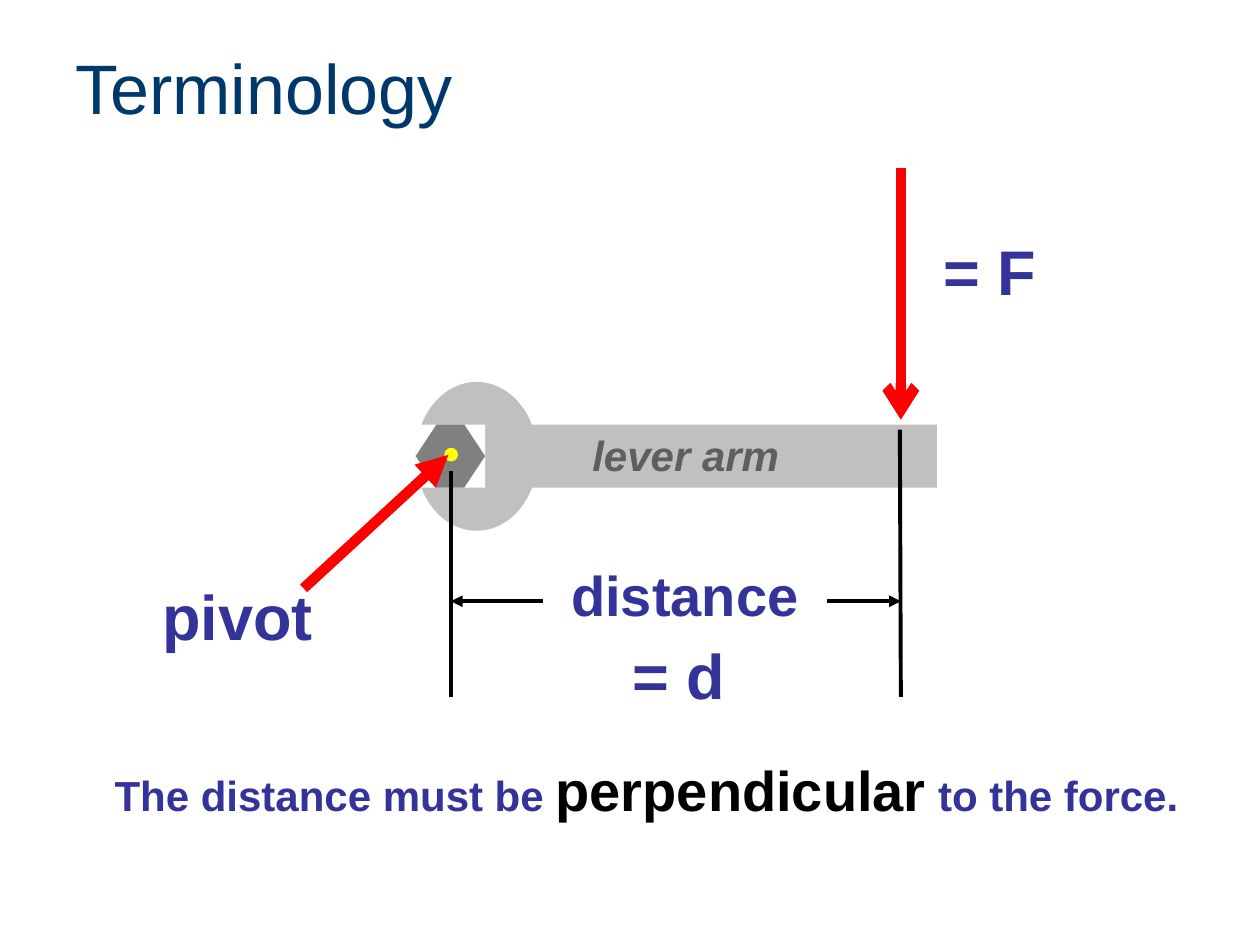
from dataclasses import dataclass

from lxml.etree import SubElement
from pptx import Presentation
from pptx.dml.color import RGBColor
from pptx.enum.shapes import MSO_CONNECTOR, MSO_SHAPE
from pptx.enum.text import MSO_ANCHOR, PP_ALIGN
from pptx.oxml.ns import qn
from pptx.util import Cm, Pt


@dataclass(frozen=True)
class Theme:
    font: str = "Arial"
    title: str = "00386B"
    label: str = "333399"
    arm_label: str = "5F5F5F"
    wrench: str = "C0C0C0"
    bolt: str = "808080"
    force: str = "FF0000"
    pivot: str = "FFFF00"
    black: str = "000000"
    white: str = "FFFFFF"
    title_size: int = 40
    symbol_size: int = 36
    strong_size: int = 32
    body_size: int = 24
    thick: float = 6
    thin: float = 2.25


def add_span(para, text, *, font, size, color, bold=True, italic=False):
    span = para.add_run()
    span.text = text
    span.font.name = font
    span.font.size = Pt(size)
    span.font.bold = bold
    span.font.italic = italic
    span.font.color.rgb = RGBColor.from_string(color)


class SlideBuilder:
    def __init__(self, page, theme):
        self.page = page
        self.theme = theme

    def title(self, text, area):
        box = self.page.shapes.title
        box.left, box.top, box.width, box.height = map(Cm, area)
        box.text_frame.vertical_anchor = MSO_ANCHOR.MIDDLE
        para = box.text_frame.paragraphs[0]
        para.alignment = PP_ALIGN.LEFT
        add_span(para, text, font=self.theme.font, size=self.theme.title_size,
                 color=self.theme.title, bold=False)

    def shape(self, kind, area, fill, outline=None):
        shape = self.page.shapes.add_shape(kind, *map(Cm, area))
        shape.shadow.inherit = False
        shape.fill.solid()
        shape.fill.fore_color.rgb = RGBColor.from_string(fill)
        if outline:
            shape.line.color.rgb = RGBColor.from_string(outline)
            shape.line.width = Pt(0.75)
        else:
            shape.line.fill.background()
        return shape

    def text(self, spans, area, *, align=PP_ALIGN.LEFT, fill=None, italic=False):
        box = self.page.shapes.add_textbox(*map(Cm, area))
        if fill:
            box.fill.solid()
            box.fill.fore_color.rgb = RGBColor.from_string(fill)
        box.text_frame.word_wrap = True
        para = box.text_frame.paragraphs[0]
        para.alignment = align
        spacing = SubElement(para._p.get_or_add_pPr(), qn("a:spcBef"))
        SubElement(spacing, qn("a:spcPct"), val="50000")
        for text, size, color in spans:
            add_span(para, text, font=self.theme.font, size=size, color=color, italic=italic)

    def line(self, start, end, color, width, *, head=None, tail=None):
        line = self.page.shapes.add_connector(MSO_CONNECTOR.STRAIGHT, *map(Cm, start + end))
        line.line.color.rgb = RGBColor.from_string(color)
        line.line.width = Pt(width)
        outline = line.line._get_or_add_ln()
        for tag, arrow in (("a:headEnd", head), ("a:tailEnd", tail)):
            if arrow:
                SubElement(outline, qn(tag), type=arrow)
        SubElement(line._element.spPr, qn("a:effectLst"))


def main():
    theme = Theme()
    deck = Presentation()
    deck.slide_width, deck.slide_height = Cm(25.4), Cm(19.05)
    page = deck.slides.add_slide(deck.slide_layouts[5])
    builder = SlideBuilder(page, theme)

    pivot_x, force_x = 9.09, 18.16
    measure_y, measure_end = 12.12, 14.05
    arm_top, arm_height = 8.56, 1.27
    jaw = (8.38, arm_top, 1.4, arm_height)
    label_size = (4.01, 1.78)

    builder.title("Terminology", (1.27, 0.76, 22.86, 1.98))

    builder.shape(MSO_SHAPE.OVAL, (8.38, 7.7, 2.46, 3), theme.wrench)
    builder.shape(MSO_SHAPE.RECTANGLE, jaw, theme.white)
    builder.shape(MSO_SHAPE.RECTANGLE, (10.13, arm_top, 8.76, arm_height), theme.wrench)
    bolt = builder.shape(MSO_SHAPE.HEXAGON, jaw, theme.bolt)
    bolt.adjustments[0] = 0.33

    builder.text([("= F", theme.symbol_size, theme.label)], (18.77, 4.57, *label_size))
    builder.text([("pivot", theme.symbol_size, theme.label)], (3.02, 11.51, *label_size))
    builder.shape(MSO_SHAPE.OVAL, (8.97, 9.04, 0.25, 0.25), theme.pivot, theme.pivot)
    builder.line((9.04, 9.17), (6.12, 11.86), theme.force, theme.thick, head="triangle")

    builder.line((pivot_x, 9.5), (pivot_x, measure_end), theme.black, theme.thin)
    builder.line((pivot_x, measure_y), (force_x, measure_y), theme.black, theme.thin,
                 head="triangle", tail="triangle")
    builder.line((18.14, 8.66), (force_x, measure_end), theme.black, theme.thin)

    builder.text([("distance", theme.strong_size, theme.label)], (10.95, 11.18, 5.72, 1.6),
                 align=PP_ALIGN.CENTER, fill=theme.white)
    builder.text([("= d", theme.symbol_size, theme.label)], (11.68, 12.7, *label_size),
                 align=PP_ALIGN.CENTER)
    builder.text([("lever arm", theme.body_size, theme.arm_label)], (11.02, 8.53, 5.61, 1.27),
                 align=PP_ALIGN.CENTER, italic=True)
    builder.text([("The distance must be ", theme.body_size, theme.label),
                  ("perpendicular", theme.strong_size, theme.black),
                  (" to the force.", theme.body_size, theme.label)],
                 (2.06, 15.11, 22.45, 1.6))
    builder.line((force_x, 3.38), (force_x, 8.46), theme.force, theme.thick, tail="arrow")

    deck.save("out.pptx")


if __name__ == "__main__":
    main()
